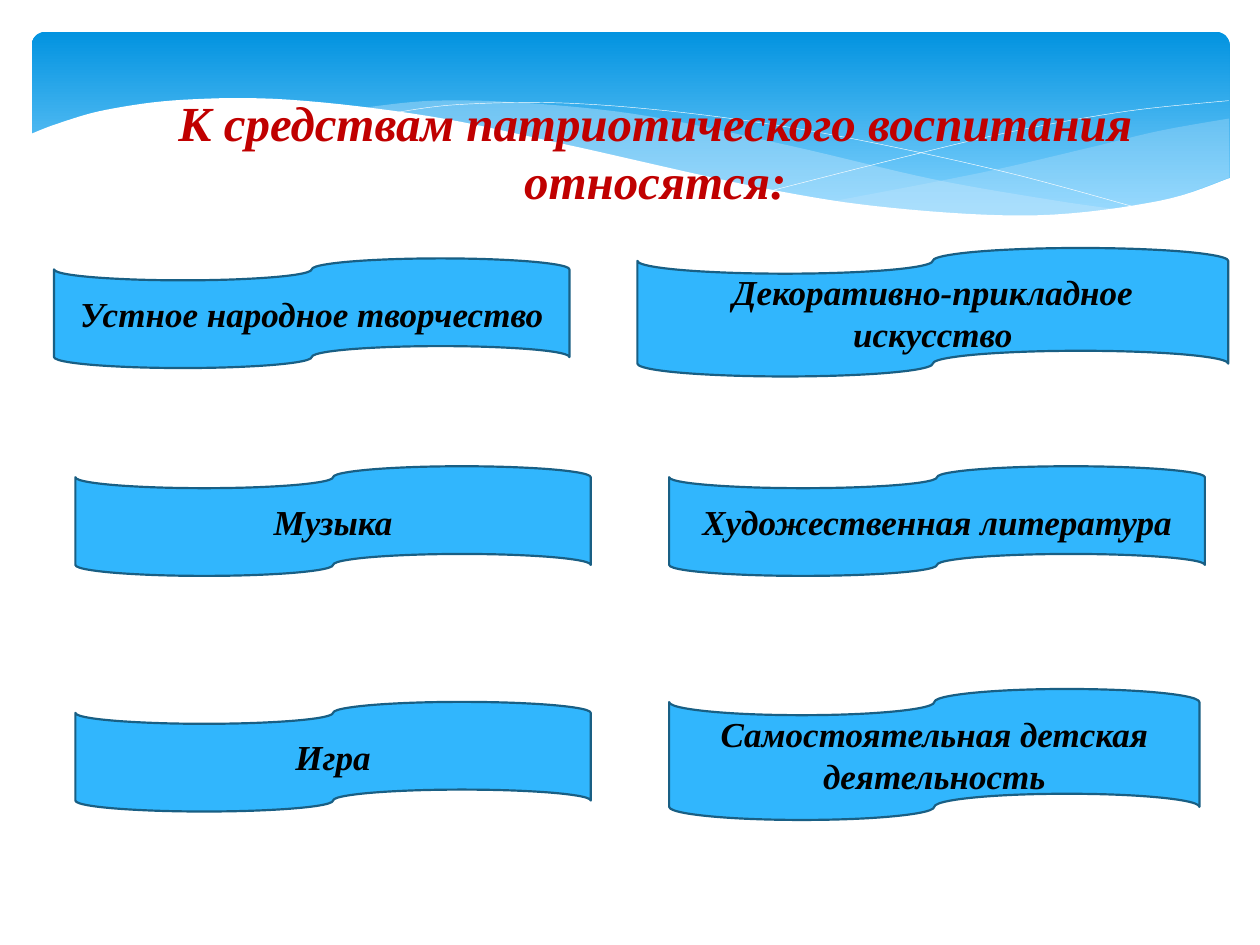
"""Build a slide listing the means of patriotic education on wavy banners."""
import pptx
import pptx.dml.color
import pptx.enum.shapes
import pptx.enum.text
import pptx.oxml
import pptx.util
from pptx.util import Cm

TITLE = "К средствам патриотического воспитания относятся:"
TITLE_BOX = (2.11, 1.73, 22.2, 2.64)
BAND_BOX = (0.64, 0.64, 24.15, 3.96)
BANNERS = [
    ("Устное народное творчество", (1.09, 5.21, 10.39, 2.21)),
    ("Музыка", (1.52, 9.4, 10.39, 2.21)),
    ("Декоративно-прикладное искусство", (12.85, 5, 11.91, 2.59)),
    ("Художественная литература", (13.49, 9.4, 10.8, 2.21)),
    ("Игра", (1.52, 14.15, 10.39, 2.21)),
    ("Самостоятельная детская деятельность", (13.49, 13.89, 10.69, 2.64)),
]
RIBBONS = [
    {"curves": [
        [(24.78, 2.39), (23.37, 2.64), (21.87, 3), (19.79, 3.48), (16.79, 4.06)],
        [(16.79, 4.06), (18.92, 4.29), (20.68, 4.37), (22.15, 4.29), (23.57, 4.01), (24.78, 3.58)]],
     "fill": "C6E7FC", "alpha": 29},
    {"curves": [
        [(7.26, 2.18), (8.74, 2.03), (10.67, 2.08), (13.06, 2.34), (15.98, 2.95),
         (18.8, 3.61), (21.26, 4.04), (22.68, 4.24)],
        [(22.68, 4.24), (20.78, 4.39), (18.36, 4.32), (15.7, 3.96), (12.47, 3.2),
         (9.73, 2.57), (7.26, 2.18)]],
     "fill": "C6E7FC", "alpha": 40},
    {"curves": [
        [(7.85, 2.29), (9.22, 2.11), (11.43, 2.08), (14.12, 2.31), (16.89, 2.74),
         (20.19, 3.45), (23.04, 4.22)]],
     "line": "FFFFFF"},
    {"curves": [
        [(15.57, 3.84), (18.29, 3.15), (20.47, 2.64), (22.74, 2.24), (24.77, 2.03)]],
     "line": "FFFFFF"},
    {"curves": [
        [(24.82, 3.58), (23.37, 4.05), (20.9, 4.34), (17.98, 4.19), (15.32, 3.78),
         (11.35, 2.9), (8.64, 2.34), (5.84, 2.01), (3.71, 2.01), (2.16, 2.21),
         (1.17, 2.49), (0.58, 2.72)],
        [(0.58, 5.69), (24.82, 5.69)]],
     "fill": "FFFFFF"},
]
FONT = {"name": "Times New Roman", "bold": True, "italic": True}


def rgb(value):
    return pptx.dml.color.RGBColor.from_string(value)


def box(values):
    return [Cm(v) for v in values]


def paint(sp, fill=None, line=None, width=0.25, alpha=None):
    sp.shadow.inherit = False
    if fill:
        sp.fill.solid()
        sp.fill.fore_color.rgb = rgb(fill)
    else:
        sp.fill.background()
    if line:
        sp.line.color.rgb = rgb(line)
        sp.line.width = pptx.util.Pt(width)
    else:
        sp.line.fill.background()
    if alpha:
        clr = sp.element.spPr.find(".//" + pptx.oxml.ns.qn("a:srgbClr"))
        clr.makeelement
        pptx.oxml.xmlchemy.OxmlElement
        a = clr.makeelement(pptx.oxml.ns.qn("a:alpha"), {"val": str(alpha * 1000)})
        clr.append(a)


def smooth(points, steps=8):
    if len(points) < 3:
        return points
    padded = [points[0], *points, points[-1]]
    curve = [points[0]]
    for a, b, c, d in zip(padded, padded[1:], padded[2:], padded[3:]):
        for t in (i / steps for i in range(1, steps + 1)):
            curve.append(tuple(
                (2 * q + (r - p) * t + (2 * p - 5 * q + 4 * r - s) * t**2
                 + (3 * q - p - 3 * r + s) * t**3) / 2
                for p, q, r, s in zip(a, b, c, d)))
    return curve


def add_ribbon(s, curves, **look):
    points = [box(pt) for curve in curves for pt in smooth(curve)]
    builder = s.shapes.build_freeform(*points[0])
    builder.add_line_segments(points[1:], close="fill" in look)
    paint(builder.convert_to_shape(), **look)


def write(sp, text, size, color, anchor):
    tf = sp.text_frame
    tf.word_wrap = True
    tf.vertical_anchor = anchor
    p = tf.paragraphs[0]
    p.alignment = pptx.enum.text.PP_ALIGN.CENTER
    r = p.add_run()
    r.text = text
    for name, value in {**FONT, "size": pptx.util.Pt(size)}.items():
        setattr(r.font, name, value)
    r.font.color.rgb = rgb(color)


def add_band(s):
    sp = s.shapes.add_shape(pptx.enum.shapes.MSO_SHAPE.ROUNDED_RECTANGLE, *box(BAND_BOX))
    sp.adjustments[0] = 0.07
    paint(sp)
    sp.fill.gradient()
    sp.fill.gradient_angle = 270
    for stop, (position, color) in zip(sp.fill.gradient_stops, [(0, "0293E0"), (0.9, "83D3FE")]):
        stop.position = position
        stop.color.rgb = rgb(color)


def add_title(s):
    sp = s.shapes.title
    for name, value in zip(("left", "top", "width", "height"), box(TITLE_BOX)):
        setattr(sp, name, value)
    write(sp, TITLE, 28, "C00000", pptx.enum.text.MSO_ANCHOR.TOP)
    sp.element.getparent().append(sp.element)


def main():
    prs = pptx.Presentation()
    prs.slide_width, prs.slide_height = Cm(25.4), Cm(19.05)
    s = prs.slides.add_slide(prs.slide_layouts[5])
    add_band(s)
    for ribbon in RIBBONS:
        add_ribbon(s, **ribbon)
    add_title(s)
    for text, place in BANNERS:
        sp = s.shapes.add_shape(pptx.enum.shapes.MSO_SHAPE.FLOWCHART_PUNCHED_TAPE, *box(place))
        paint(sp, "31B6FD", "195F84", 1.25)
        write(sp, text, 20, "000000", pptx.enum.text.MSO_ANCHOR.MIDDLE)
    prs.save("out.pptx")


if __name__ == "__main__":
    main()
